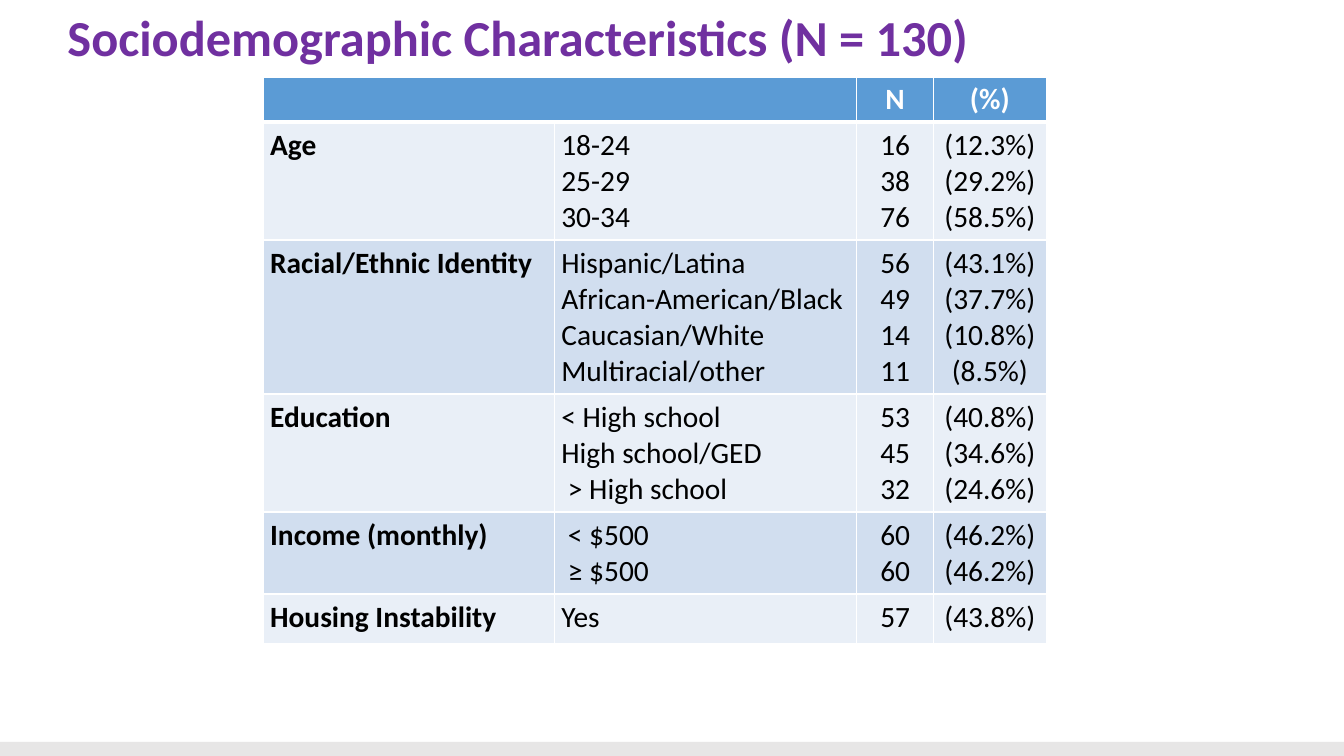
from dataclasses import dataclass

from lxml.etree import SubElement
from pptx import Presentation
from pptx.dml.color import RGBColor
from pptx.enum.shapes import MSO_SHAPE
from pptx.enum.text import MSO_ANCHOR, MSO_AUTO_SIZE, PP_ALIGN
from pptx.oxml.ns import qn
from pptx.slide import Slide
from pptx.table import Table, _Cell as Cell
from pptx.util import Pt


@dataclass(frozen=True)
class Theme:
    font: str = "Calibri"
    title_size: float = 36
    table_size: float = 21
    title: str = "7030A0"
    header: str = "5B9BD5"
    bands: tuple[str, str] = ("E9EFF7", "D1DEEF")
    white: str = "FFFFFF"
    text: str = "000000"
    footer: str = "E7E6E6"
    thin: float = 0.96
    thick: float = 3


@dataclass(frozen=True)
class Group:
    name: str
    height: float
    levels: tuple[tuple[str, str, str], ...]


THEME = Theme()
SLIDE_W, SLIDE_H = 960, 540
COLUMN_WIDTHS = (208, 216, 54.9, 80.4)
HEADER_HEIGHT = 31
TABLE_LEFT, TABLE_TOP, TABLE_HEIGHT = 188, 54.3, 399
GROUPS = (
    Group("Age", 78.5, (
        ("18-24", "16", "(12.3%)"),
        ("25-29", "38", "(29.2%)"),
        ("30-34", "76", "(58.5%)"),
    )),
    Group("Racial/Ethnic Identity", 103, (
        ("Hispanic/Latina", "56", "(43.1%)"),
        ("African-American/Black", "49", "(37.7%)"),
        ("Caucasian/White", "14", "(10.8%)"),
        ("Multiracial/other", "11", "(8.5%)"),
    )),
    Group("Education", 78.5, (
        ("< High school", "53", "(40.8%)"),
        ("High school/GED", "45", "(34.6%)"),
        (" > High school", "32", "(24.6%)"),
    )),
    Group("Income (monthly)", 54.7, (
        (" < $500", "60", "(46.2%)"),
        (" ≥ $500", "60", "(46.2%)"),
    )),
    Group("Housing Instability", 35.3, (("Yes", "57", "(43.8%)"),)),
)


def rgb(value: str) -> RGBColor:
    return RGBColor.from_string(value)


def add_title(s: Slide, text: str) -> None:
    sp = s.shapes.title
    sp.left, sp.top, sp.width, sp.height = Pt(41), Pt(2.2), Pt(894), Pt(60)
    tf = sp.text_frame
    tf.auto_size = MSO_AUTO_SIZE.NONE
    tf.word_wrap = True
    tf.vertical_anchor = MSO_ANCHOR.TOP
    tf.margin_left = tf.margin_right = tf.margin_top = tf.margin_bottom = Pt(7.2)
    tf.text = text
    p = tf.paragraphs[0]
    p.alignment = PP_ALIGN.LEFT
    p.line_spacing = 0.9
    p.font.name, p.font.size, p.font.bold = THEME.font, Pt(THEME.title_size), True
    p.font.color.rgb = rgb(THEME.title)


def add_footer_bar(s: Slide) -> None:
    sp = s.shapes.add_shape(MSO_SHAPE.RECTANGLE, 0, Pt(530), Pt(SLIDE_W), Pt(10))
    sp.shadow.inherit = False
    sp.fill.solid()
    sp.fill.fore_color.rgb = rgb(THEME.footer)
    sp.line.fill.background()


def style_cell(cell: Cell, fill: str, top: float, bottom: float) -> None:
    """Set margins, white borders and fill; top and bottom are line widths."""
    cell.margin_left = cell.margin_right = Pt(5)
    cell.margin_top = cell.margin_bottom = Pt(3.6)
    tc_pr = cell._tc.get_or_add_tcPr()
    borders = (("a:lnL", THEME.thin), ("a:lnR", THEME.thin), ("a:lnT", top), ("a:lnB", bottom))
    for tag, width in borders:
        line = SubElement(tc_pr, qn(tag), w=str(Pt(width)))
        SubElement(SubElement(line, qn("a:solidFill")), qn("a:srgbClr"), val=THEME.white)
    cell.fill.solid()
    cell.fill.fore_color.rgb = rgb(fill)


def write_cell(cell: Cell, lines: tuple[str, ...], color: str, bold: bool, centered: bool) -> None:
    tf = cell.text_frame
    tf.text = "\n".join(lines)
    for p in tf.paragraphs:
        p.alignment = PP_ALIGN.CENTER if centered else PP_ALIGN.LEFT
        p.font.name, p.font.size, p.font.bold = THEME.font, Pt(THEME.table_size), bold
        p.font.color.rgb = rgb(color)


def fill_header(table: Table) -> None:
    table.rows[0].height = Pt(HEADER_HEIGHT)
    for cell in table.rows[0].cells:
        style_cell(cell, THEME.header, THEME.thick, THEME.thick)
    table.cell(0, 0).merge(table.cell(0, 1))
    for col, label in enumerate(("N", "(%)"), start=2):
        write_cell(table.cell(0, col), (label,), THEME.white, True, True)


def fill_group(table: Table, row: int, group: Group) -> None:
    table.rows[row].height = Pt(group.height)
    top = THEME.thick if row == 1 else THEME.thin
    for col, lines in enumerate(((group.name,), *zip(*group.levels))):
        cell = table.cell(row, col)
        style_cell(cell, THEME.bands[(row - 1) % 2], top, THEME.thin)
        write_cell(cell, lines, THEME.text, col == 0, col >= 2)


def add_characteristics_table(s: Slide) -> None:
    frame = s.shapes.add_table(
        len(GROUPS) + 1, len(COLUMN_WIDTHS), Pt(TABLE_LEFT), Pt(TABLE_TOP),
        Pt(sum(COLUMN_WIDTHS)), Pt(TABLE_HEIGHT))
    table = frame.table
    table.first_row = table.horz_banding = False
    for column, width in zip(table.columns, COLUMN_WIDTHS):
        column.width = Pt(width)
    fill_header(table)
    for row, group in enumerate(GROUPS, start=1):
        fill_group(table, row, group)
    frame.height = Pt(TABLE_HEIGHT)


def main() -> None:
    prs = Presentation()
    prs.slide_width, prs.slide_height = Pt(SLIDE_W), Pt(SLIDE_H)
    s = prs.slides.add_slide(prs.slide_layouts[5])
    add_footer_bar(s)
    add_title(s, "Sociodemographic Characteristics (N = 130)")
    add_characteristics_table(s)
    prs.save("out.pptx")


if __name__ == "__main__":
    main()
